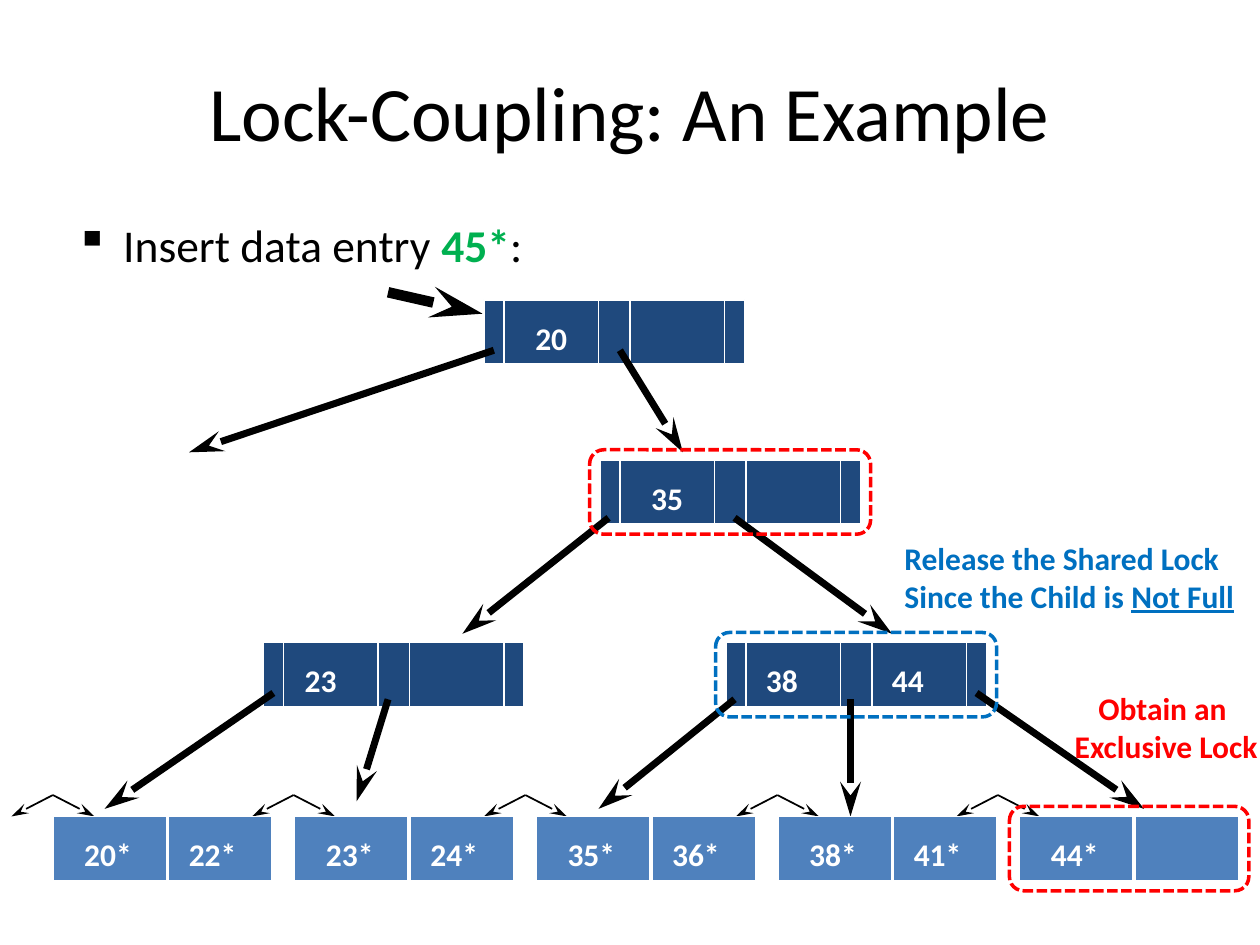
from dataclasses import dataclass
from typing import NamedTuple

from lxml import etree
from pptx import Presentation
from pptx.dml.color import RGBColor
from pptx.enum.dml import MSO_LINE
from pptx.enum.shapes import MSO_CONNECTOR, MSO_SHAPE
from pptx.enum.text import MSO_ANCHOR, PP_ALIGN
from pptx.oxml.ns import qn
from pptx.util import Inches, Pt

STRAIGHT = MSO_CONNECTOR.STRAIGHT
RECT, ROUND_RECT = MSO_SHAPE.RECTANGLE, MSO_SHAPE.ROUNDED_RECTANGLE
DASH = MSO_LINE.SQUARE_DOT
TOP, MIDDLE = MSO_ANCHOR.TOP, MSO_ANCHOR.MIDDLE
LEFT, CENTER = PP_ALIGN.LEFT, PP_ALIGN.CENTER


@dataclass(frozen=True)
class Theme:
    font: str = "Calibri"
    black: str = "000000"
    white: str = "FFFFFF"
    node: str = "1F497D"
    leaf: str = "4F81BD"
    red: str = "FF0000"
    blue: str = "0070C0"
    green: str = "00B050"
    title: int = 44
    body: int = 26
    label: int = 18


T = Theme()


class Run(NamedTuple):
    text: str
    color: str
    size: int = T.label
    bold: bool = True
    underline: bool = False


class Box(NamedTuple):
    x: float
    y: float
    w: float
    h: float


class Label(NamedTuple):
    text: str
    dx: float


class Node(NamedTuple):
    x: float
    y: float
    labels: tuple[Label, ...]


class Arrow(NamedTuple):
    x1: float
    y1: float
    x2: float
    y2: float
    width: float = 4


NODE_W, LEAF_W, BOX_H = 2.07, 1.74, 0.51
NODE_DIVIDERS = (0.16, 0.91, 1.16, 1.91)
LEAF_DIVIDER, LEAF_LABELS = 0.91, (0.15, 0.98)
LEAF_X, LEAF_Y, LEAF_STEP = 0.42, 6.48, 1.918
LOCK_PAD = 0.08

NODES = (
    Node(3.84, 2.38, (Label("20", 0.31),)),
    Node(4.76, 3.65, (Label("35", 0.31),)),
    Node(2.09, 5.1, (Label("23", 0.23),)),
    Node(5.76, 5.1, (Label("38", 0.22), Label("44", 1.22))),
)
LEAVES = (("20*", "22*"), ("23*", "24*"), ("35*", "36*"), ("38*", "41*"), ("44*",))
SIBLING_PEAKS = (0.42, 2.33, 4.17, 6.17, 7.92)
ARROWS = (
    Arrow(3.08, 2.32, 3.83, 2.49, 6),
    Arrow(3.92, 2.78, 1.5, 3.59),
    Arrow(4.92, 2.78, 5.42, 3.59),
    Arrow(4.83, 4.11, 3.67, 5.03),
    Arrow(5.83, 4.11, 7.08, 5.03),
    Arrow(5.83, 5.55, 4.75, 6.42),
    Arrow(6.75, 5.55, 6.75, 6.48),
    Arrow(7.75, 5.5, 9.08, 6.42),
    Arrow(2.17, 5.5, 0.83, 6.42),
    Arrow(3.08, 5.55, 2.83, 6.36),
)


def rgb(color: str) -> RGBColor:
    return RGBColor.from_string(color)


def add_text(s, box: Box, lines: list[list[Run]], align=LEFT, anchor=TOP, wrap=True):
    tf = s.shapes.add_textbox(*map(Inches, box)).text_frame
    tf.word_wrap, tf.vertical_anchor = wrap, anchor
    p = tf.paragraphs[0]
    p.alignment = align
    for i, line in enumerate(lines):
        if i:
            p.add_line_break()
        for run in line:
            r = p.add_run()
            r.text = run.text
            r.font.color.rgb = rgb(run.color)
            formats = {"name": T.font, "size": Pt(run.size), "bold": run.bold,
                       "underline": run.underline}
            for name, value in formats.items():
                setattr(r.font, name, value)
    return p


def add_bullet(p, char: str, indent: float) -> None:
    pPr = p._p.get_or_add_pPr()
    pPr.set("marL", str(Inches(indent)))
    pPr.set("indent", str(-Inches(indent)))
    etree.SubElement(pPr, qn("a:buChar"), char=char)


def add_line(s, line: Arrow, color: str, arrow: bool = False) -> None:
    sp = s.shapes.add_connector(STRAIGHT, *map(Inches, line[:4]))
    sp.line.width = Pt(line.width)
    sp.line.color.rgb = rgb(color)
    if arrow:
        ln = sp.line._get_or_add_ln()
        etree.SubElement(ln, qn("a:tailEnd"), type="stealth", w="med", len="lg")
    etree.SubElement(sp._element.spPr, qn("a:effectLst"))


def add_cell_box(s, box: Box, fill: str, dividers: tuple[float, ...],
                 divider_width: float, labels: tuple[Label, ...]) -> None:
    sp = s.shapes.add_shape(RECT, *map(Inches, box))
    sp.shadow.inherit = False
    sp.fill.solid()
    sp.fill.fore_color.rgb = rgb(fill)
    sp.line.color.rgb = rgb(T.white)
    sp.line.width = Pt(1)
    for dx in dividers:
        x = box.x + dx
        add_line(s, Arrow(x, box.y, x, box.y + box.h, divider_width), T.white)
    for label in labels:
        add_text(s, Box(box.x + label.dx, box.y + 0.1, 0.68, 0.35),
                 [[Run(label.text, T.white)]])


def add_lock(s, x: float, y: float, w: float, color: str) -> None:
    box = Box(x - LOCK_PAD, y - LOCK_PAD, w + 2 * LOCK_PAD, BOX_H + 2 * LOCK_PAD)
    sp = s.shapes.add_shape(ROUND_RECT, *map(Inches, box))
    sp.shadow.inherit = False
    sp.fill.background()
    sp.line.color.rgb = rgb(color)
    sp.line.width = Pt(2)
    sp.line.dash_style = DASH


def main() -> None:
    prs = Presentation()
    prs.slide_width, prs.slide_height = Inches(10), Inches(7.5)
    s = prs.slides.add_slide(prs.slide_layouts[6])

    add_text(s, Box(0.5, 0.25, 9, 1.25),
             [[Run("Lock-Coupling: An Example", T.black, T.title, False)]], CENTER, MIDDLE)
    p = add_text(s, Box(0.5, 1.67, 9.17, 0.6),
                 [[Run("Insert data entry ", T.black, T.body, False),
                   Run("45*", T.green, T.body), Run(":", T.black, T.body, False)]])
    add_bullet(p, "▪", 0.38)

    for x in SIBLING_PEAKS:
        for dx in (-0.33, 0.33):
            add_line(s, Arrow(x, 6.31, x + dx, LEAF_Y, 1), T.black, True)
    for node in NODES:
        add_cell_box(s, Box(node.x, node.y, NODE_W, BOX_H), T.node,
                     NODE_DIVIDERS, 1, node.labels)
    for arrow in ARROWS:
        add_line(s, arrow, T.black, True)
    for i, entries in enumerate(LEAVES):
        add_cell_box(s, Box(LEAF_X + i * LEAF_STEP, LEAF_Y, LEAF_W, BOX_H), T.leaf,
                     (LEAF_DIVIDER,), 2, tuple(map(Label, entries, LEAF_LABELS)))

    add_text(s, Box(8.42, 5.42, 1.67, 0.71),
             [[Run("Obtain an ", T.red)], [Run("Exclusive Lock", T.red)]], CENTER, wrap=False)
    add_lock(s, NODES[1].x, NODES[1].y, NODE_W, T.red)
    add_lock(s, NODES[3].x, NODES[3].y, NODE_W, T.blue)
    add_lock(s, LEAF_X + 4 * LEAF_STEP, LEAF_Y, LEAF_W, T.red)
    add_text(s, Box(7.08, 4.23, 2.84, 0.71),
             [[Run("Release the Shared Lock ", T.blue)],
              [Run("Since the Child is ", T.blue),
               Run("Not Full", T.blue, underline=True)]], wrap=False)
    prs.save("out.pptx")


if __name__ == "__main__":
    main()
